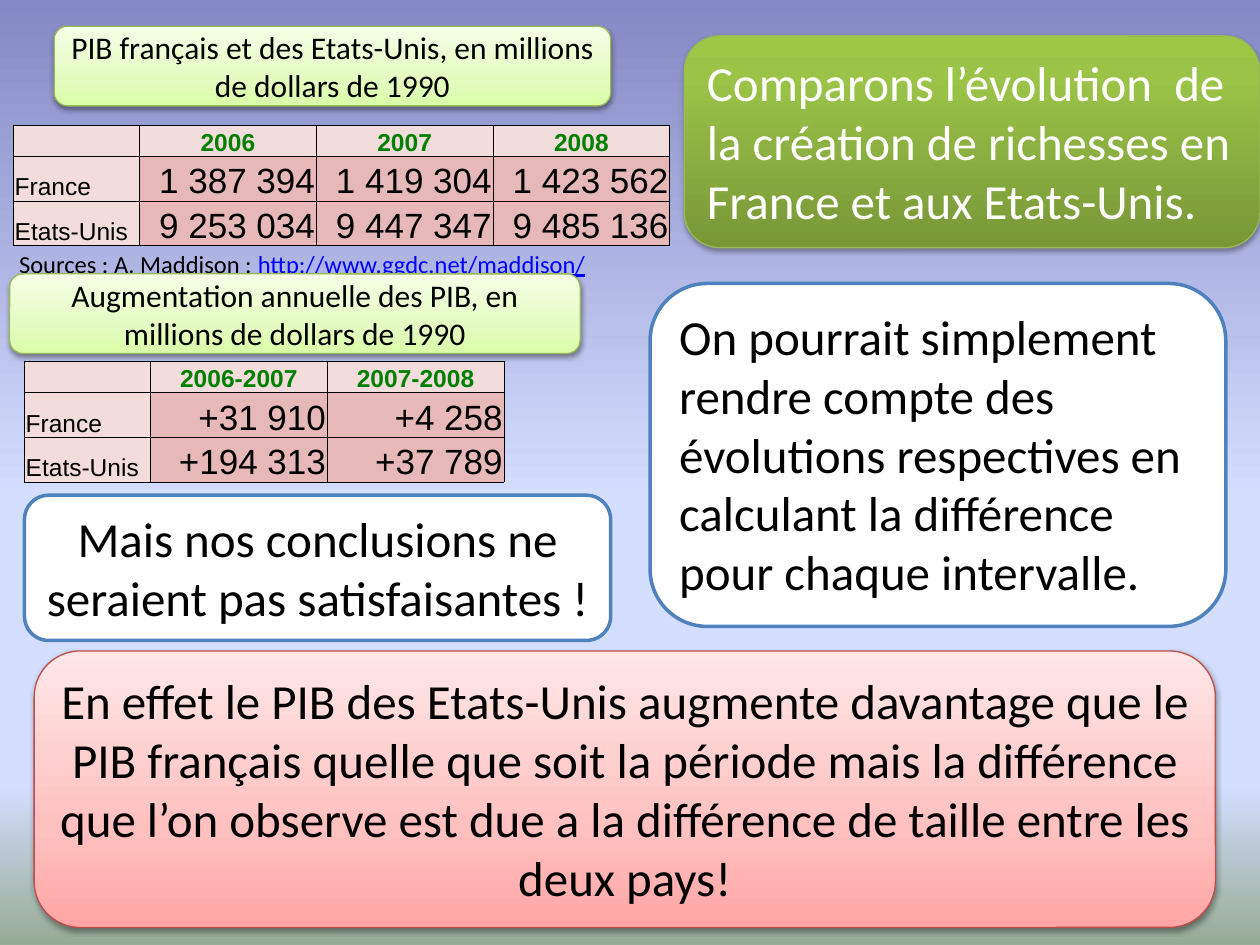
"""Build the slide comparing French and American GDP growth."""
from dataclasses import dataclass

from lxml.etree import SubElement
from pptx import Presentation
from pptx.dml.color import RGBColor
from pptx.enum.shapes import MSO_SHAPE
from pptx.enum.text import MSO_ANCHOR, MSO_AUTO_SIZE, PP_ALIGN
from pptx.oxml.ns import qn
from pptx.util import Pt


@dataclass(frozen=True)
class Theme:
    body: str = "Calibri"
    data: str = "Arial"
    big: int = 28
    label: int = 18
    figure: int = 20
    small: int = 14
    black: str = "000000"
    white: str = "FFFFFF"
    blue: str = "4F81BD"
    link: str = "0000FF"
    head: str = "008000"
    pale: str = "F2DDDC"
    rose: str = "E6B9B8"
    lime: str = "98B955"
    red: str = "BF4C48"
    sky: tuple = ((0, "8488C4"), (53, "D4DEFF"), (83, "D4DEFF"), (100, "96AB94"))
    leaf: tuple = ((0, "779737"), (80, "9BC348"), (100, "9DC746"))
    mint: tuple = ((0, "DAFDA7"), (35, "E4FCC2"), (100, "F5FFE7"))
    blush: tuple = ((0, "FFA6A5"), (35, "FFC0BF"), (100, "FFE7E7"))


class Deck:
    def __init__(self, theme):
        self.theme = theme
        self.show = Presentation()
        self.show.slide_width, self.show.slide_height = Pt(720), Pt(540)
        self.slide = self.show.slides.add_slide(self.show.slide_layouts[6])

    def blend(self, fill, host, stops, angle):
        fill.gradient()
        fill.gradient_angle = angle
        group = host.find(".//" + qn("a:gsLst"))
        for old in list(group):
            group.remove(old)
        for place, color in stops:
            stop = SubElement(group, qn("a:gs"), pos=str(place * 1000))
            SubElement(stop, qn("a:srgbClr"), val=color)

    def back(self, stops):
        self.blend(self.slide.background.fill, self.slide.element, stops, 270)

    def shade(self, shape, alpha):
        effects = shape._element.spPr.find(qn("a:effectLst"))
        outer = SubElement(effects, qn("a:outerShdw"), blurRad=str(Pt(3.1)),
                           dist=str(Pt(1.7)), dir="5400000", rotWithShape="0")
        color = SubElement(outer, qn("a:srgbClr"), val=self.theme.black)
        SubElement(color, qn("a:alpha"), val=str(alpha * 1000))

    def words(self, para, text, size, color, face=None, bold=False, under=False):
        run = para.add_run()
        run.text = text
        font = run.font
        font.name, font.size, font.bold = face or self.theme.body, Pt(size), bold
        font.color.rgb = RGBColor.from_string(color)
        if under:
            font.underline = True

    def panel(self, box, text, line, fill=None, alpha=38, color=None,
              align=PP_ALIGN.CENTER):
        shape = self.slide.shapes.add_shape(
            MSO_SHAPE.ROUNDED_RECTANGLE, *map(Pt, box))
        shape.shadow.inherit = False
        if fill:
            self.blend(shape.fill, shape._element.spPr, fill, 90)
            self.shade(shape, alpha)
        else:
            shape.fill.solid()
            shape.fill.fore_color.rgb = RGBColor.from_string(self.theme.white)
        shape.line.color.rgb = RGBColor.from_string(line)
        shape.line.width = Pt(0.75 if fill else 2)
        frame = shape.text_frame
        frame.word_wrap = True
        frame.auto_size = MSO_AUTO_SIZE.SHAPE_TO_FIT_TEXT
        frame.vertical_anchor = MSO_ANCHOR.TOP
        para = frame.paragraphs[0]
        para.alignment = align
        self.words(para, text, self.theme.big, color or self.theme.black)
        return shape

    def label(self, box, text):
        theme = self.theme
        shape = self.panel(box, text, theme.lime, theme.mint)
        frame = shape.text_frame
        frame.auto_size = MSO_AUTO_SIZE.NONE
        frame.vertical_anchor = MSO_ANCHOR.MIDDLE
        frame.paragraphs[0].runs[0].font.size = Pt(theme.label)

    def source(self, box, text, link):
        theme = self.theme
        frame = self.slide.shapes.add_textbox(*map(Pt, box)).text_frame
        frame.word_wrap = True
        frame.auto_size = MSO_AUTO_SIZE.SHAPE_TO_FIT_TEXT
        para = frame.paragraphs[0]
        para.alignment = PP_ALIGN.CENTER
        self.words(para, text, theme.small, theme.black)
        self.words(para, link, theme.small, theme.link, under=True)

    def cell(self, cell, text, head, first):
        theme = self.theme
        props = cell._tc.get_or_add_tcPr()
        for side in ("a:lnL", "a:lnR", "a:lnT", "a:lnB"):
            edge = SubElement(props, qn(side), w=str(Pt(0.5)))
            paint = SubElement(edge, qn("a:solidFill"))
            SubElement(paint, qn("a:srgbClr"), val=theme.black)
        cell.fill.solid()
        cell.fill.fore_color.rgb = RGBColor.from_string(
            theme.pale if head or first else theme.rose)
        cell.margin_left = cell.margin_right = cell.margin_top = Pt(0.7)
        cell.margin_bottom = 0
        cell.vertical_anchor = MSO_ANCHOR.BOTTOM
        para = cell.text_frame.paragraphs[0]
        if not text:
            SubElement(para._p, qn("a:endParaRPr"), sz=str(theme.small * 100))
            return
        para.alignment = (PP_ALIGN.CENTER if head else
                          PP_ALIGN.LEFT if first else PP_ALIGN.RIGHT)
        self.words(para, text, theme.small if head or first else theme.figure,
                   theme.head if head else theme.black, theme.data, head)

    def table(self, left, top, rows):
        wide = [72] + [101] * (len(rows[0]) - 1)
        high = [18] + [25.5] * (len(rows) - 1)
        box = map(Pt, (left, top, sum(wide), sum(high)))
        grid = self.slide.shapes.add_table(len(rows), len(wide), *box).table
        grid.first_row = grid.horz_banding = False
        for col, width in zip(grid.columns, wide):
            col.width = Pt(width)
        for y, row in enumerate(rows):
            grid.rows[y].height = Pt(high[y])
            for x, text in enumerate(row):
                self.cell(grid.cell(y, x), text, y == 0, x == 0)


def main():
    theme = Theme()
    deck = Deck(theme)
    deck.back(theme.sky)
    deck.panel((391, 20.5, 329, 121),
               "Comparons l’évolution  de la création de richesses en France "
               "et aux Etats-Unis.",
               theme.lime, theme.leaf, 35, theme.white, PP_ALIGN.LEFT)
    deck.panel((371.5, 162, 329, 196),
               "On pourrait simplement rendre compte des évolutions respectives "
               "en calculant la différence pour chaque intervalle.",
               theme.blue, align=PP_ALIGN.LEFT)
    deck.panel((14, 283, 335, 83),
               "Mais nos conclusions ne seraient pas satisfaisantes !", theme.blue)
    deck.panel((19.5, 372, 675, 158),
               "En effet le PIB des Etats-Unis augmente davantage que le PIB "
               "français quelle que soit la période mais la différence que l’on "
               "observe est due a la différence de taille entre les deux pays!",
               theme.red, theme.blush)
    deck.label((31, 15, 318, 45.5),
               "PIB français et des Etats-Unis, en millions de dollars de 1990")
    deck.source((0, 138.5, 345.5, 24.5), "Sources : A. Maddison : ",
                "http://www.ggdc.net/maddison/")
    deck.table(7.75, 71.5, (("", "2006", "2007", "2008"),
                            ("France", "1 387 394", "1 419 304", "1 423 562"),
                            ("Etats-Unis", "9 253 034", "9 447 347", "9 485 136")))
    deck.table(14, 206.5, (("", "2006-2007", "2007-2008"),
                           ("France", "+31 910", "+4 258"),
                           ("Etats-Unis", "+194 313", "+37 789")))
    deck.label((5.5, 156.5, 326, 45.5),
               "Augmentation annuelle des PIB, en millions de dollars de 1990")
    deck.show.save("out.pptx")


if __name__ == "__main__":
    main()
